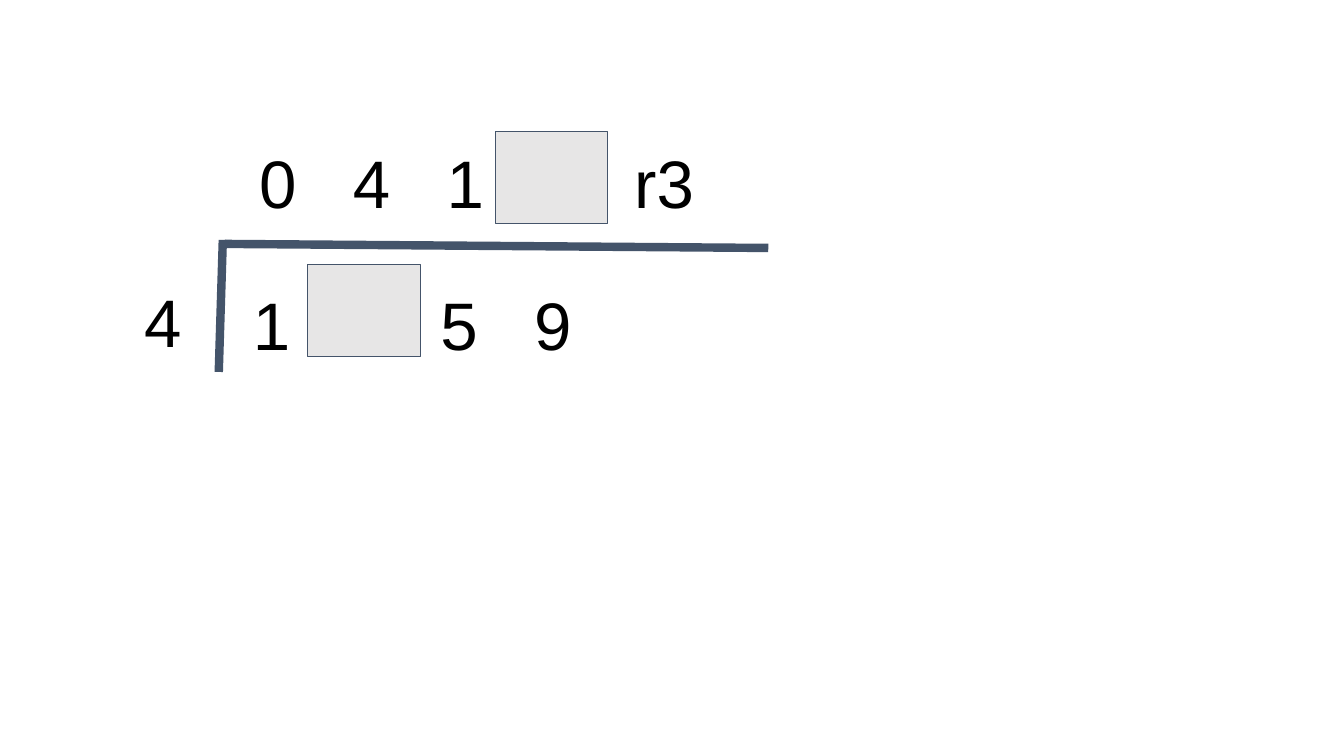
from lxml.etree import SubElement
from pptx import Presentation
from pptx.dml.color import RGBColor
from pptx.enum.shapes import MSO_CONNECTOR as Connector, MSO_SHAPE as Shape
from pptx.oxml.ns import qn
from pptx.util import Inches, Pt

BLACK = RGBColor(0x00, 0x00, 0x00)
SLATE = RGBColor(0x44, 0x54, 0x6A)
GREY = RGBColor(0xE7, 0xE6, 0xE6)

COLUMN = 0.93  # distance between neighbouring digits


def add_digits(slide, left, top, width, height, digits, columns=(), indent=0.1):
    """Write digits in one line, those after the first at the given columns."""
    box = slide.shapes.add_textbox(
        Inches(left), Inches(top), Inches(width), Inches(height))
    frame = box.text_frame
    frame.word_wrap = True
    frame.margin_left = Inches(indent)
    frame.margin_right = frame.margin_bottom = Inches(0.1)
    frame.margin_top = Inches(0.16)
    line = frame.paragraphs[0]
    line.text = "\t".join(digits)
    line.font.size = Pt(48)
    line.font.name = "Arial"
    line.font.color.rgb = BLACK
    if columns:
        stops = line._p.get_or_add_pPr()
        tab_list = stops.find(qn("a:tabLst"))
        if tab_list is None:
            tab_list = SubElement(stops, qn("a:tabLst"))
            stops.insert(0, tab_list)
        for column in columns:
            SubElement(tab_list, qn("a:tab"),
                       pos=str(Inches(column * COLUMN)), algn="l")


def add_blank(slide, left, top):
    blank = slide.shapes.add_shape(
        Shape.RECTANGLE, Inches(left), Inches(top), Inches(1.12), Inches(0.92))
    blank.shadow.inherit = False
    blank.fill.solid()
    blank.fill.fore_color.rgb = GREY
    blank.line.color.rgb = SLATE
    blank.line.width = Pt(0.75)


def add_bar(slide, start_x, start_y, end_x, end_y):
    bar = slide.shapes.add_connector(
        Connector.STRAIGHT, Inches(start_x), Inches(start_y),
        Inches(end_x), Inches(end_y))
    bar.line.color.rgb = SLATE
    bar.line.width = Pt(6)
    SubElement(bar._element.spPr, qn("a:effectLst"))


def add_long_division(slide, left, top):
    """Draw the division with missing digits from its top left corner."""
    add_bar(slide, left + 0.88, top + 1.14, left + 0.84, top + 2.45)
    add_bar(slide, left + 0.9, top + 1.18, left + 6.29, top + 1.22)
    add_digits(slide, left + 1.08, top + 1.41, 5.31, 1.16,
               ["1", "5", "9"], columns=(2, 3))
    add_digits(slide, left + 0.77, top, 5.52, 1.02,
               ["0", "4", "1", "r3"], columns=(1, 2, 4), indent=0.47)
    for column, blank_top in ((3, 0.06), (1, 1.38)):
        add_blank(slide, left + 0.79 + column * COLUMN, top + blank_top)
    add_digits(slide, left, top + 1.38, 1.35, 1.31, ["4"])


def main():
    deck = Presentation()
    deck.slide_width, deck.slide_height = Inches(13.33), Inches(7.5)
    slide = deck.slides.add_slide(deck.slide_layouts[6])
    add_long_division(slide, left=1.33, top=1.24)
    deck.save("out.pptx")


if __name__ == "__main__":
    main()
